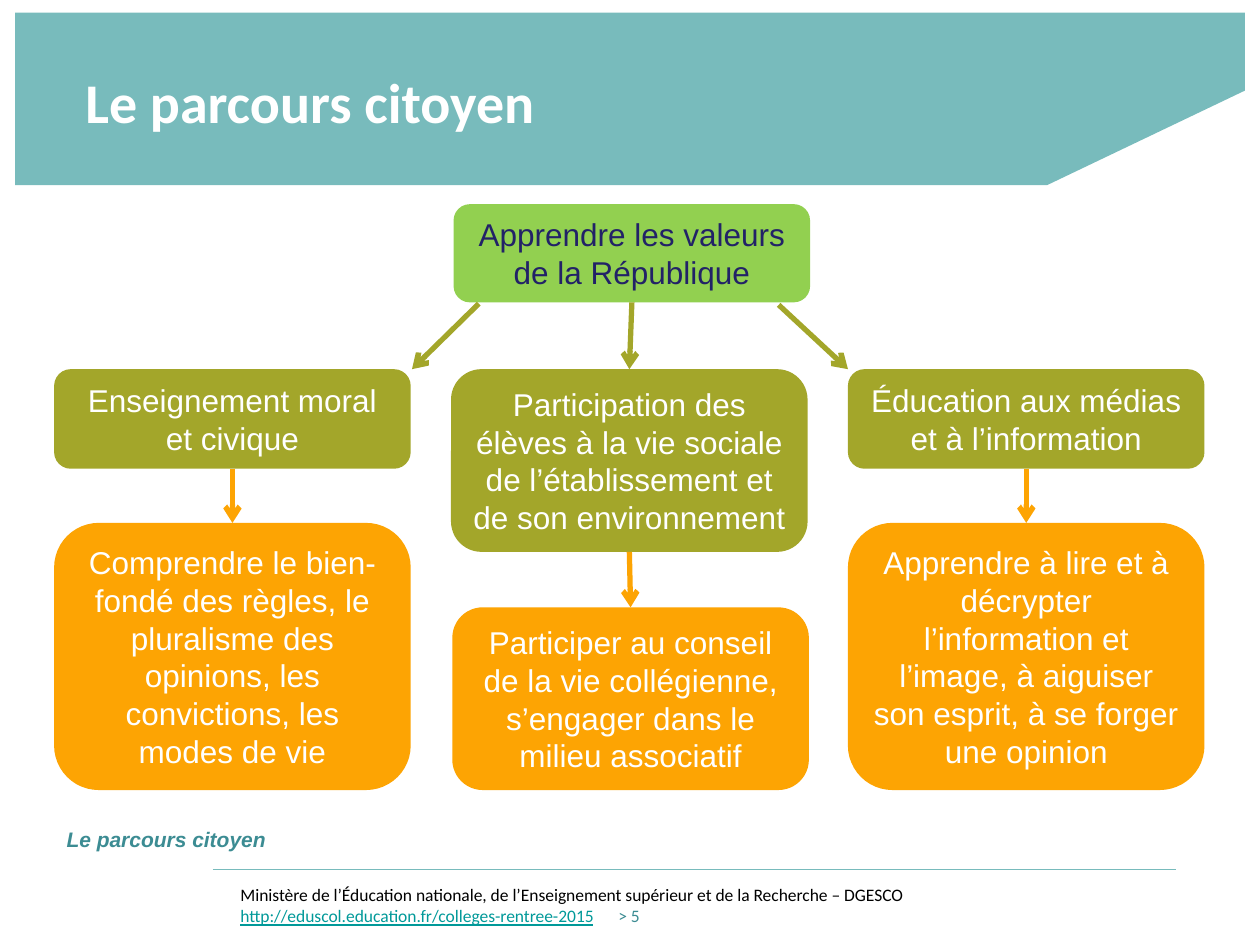
from lxml import etree
from pptx import Presentation
from pptx.dml.color import RGBColor
from pptx.enum.shapes import MSO_CONNECTOR, MSO_SHAPE
from pptx.enum.text import MSO_ANCHOR, PP_ALIGN
from pptx.oxml.ns import qn
from pptx.util import Inches, Pt

LINE = MSO_CONNECTOR.STRAIGHT
ROUND = MSO_SHAPE.ROUNDED_RECTANGLE
MIDDLE = MSO_ANCHOR.MIDDLE
TOP = MSO_ANCHOR.TOP
CENTER = PP_ALIGN.CENTER

COLORS = {
    "teal": "78BBBC", "dark": "3C8C93", "link": "009999",
    "green": "92D050", "olive": "A3A62A", "orange": "FDA403",
    "navy": "222267", "white": "FFFFFF", "black": "000000",
}


class Deck:
    def __init__(self, slide):
        self.slide = slide
        self.shapes = slide.shapes
        self.font = "Arial"
        self.head = "Calibri"
        self.size = 18
        self.width = 2.83

    def color(self, name):
        return RGBColor.from_string(COLORS[name])

    def paint(self, shape, fill):
        shape.shadow.inherit = False
        shape.fill.solid()
        shape.fill.fore_color.rgb = self.color(fill)
        shape.line.fill.background()

    def run(self, para, text, color, size, font, bold=False, italic=False, under=False):
        run = para.add_run()
        run.text = text
        face = run.font
        face.name, face.size = font, Pt(size)
        face.bold, face.italic, face.underline = bold, italic, under
        face.color.rgb = self.color(color)

    def text(self, left, top, width, height, anchor=TOP, wrap=True):
        frame = self.shapes.add_textbox(
            Inches(left), Inches(top), Inches(width), Inches(height)).text_frame
        frame.word_wrap = wrap
        frame.vertical_anchor = anchor
        return frame

    def box(self, left, top, height, text, fill, color="white"):
        shape = self.shapes.add_shape(
            ROUND, Inches(left), Inches(top), Inches(self.width), Inches(height))
        self.paint(shape, fill)
        frame = shape.text_frame
        frame.word_wrap = True
        frame.vertical_anchor = MIDDLE
        para = frame.paragraphs[0]
        para.alignment = CENTER
        self.run(para, text, color, self.size, self.font)
        return shape

    def line(self, start, end, color, weight):
        line = self.shapes.add_connector(LINE, *[Inches(n) for n in (*start, *end)])
        line.line.color.rgb = self.color(color)
        line.line.width = Pt(weight)
        etree.SubElement(line._element.spPr, qn("a:effectLst"))
        return line

    def arrow(self, start, end, color):
        line = self.line(start, end, color, 3)
        etree.SubElement(line.line._get_or_add_ln(), qn("a:tailEnd"), type="arrow")
        return line

    def join(self, upper, lower, color):
        line = self.arrow((0, 0), (1, 1), color)
        line.begin_connect(upper, 2)
        line.end_connect(lower, 0)

    def banner(self, points):
        spots = [(Inches(x), Inches(y)) for x, y in points]
        build = self.shapes.build_freeform(*spots[0])
        build.add_line_segments(spots[1:], close=True)
        self.paint(build.convert_to_shape(), "teal")

    def tab(self, para, pos):
        tabs = etree.SubElement(para._p.get_or_add_pPr(), qn("a:tabLst"))
        etree.SubElement(tabs, qn("a:tab"), pos=str(Inches(pos)), algn="l")


def main():
    prs = Presentation()
    prs.slide_width, prs.slide_height = Inches(10), Inches(7.5)
    deck = Deck(prs.slides.add_slide(prs.slide_layouts[6]))

    deck.banner([(9.88, 0.1), (0.12, 0.1), (0.12, 1.47), (8.31, 1.47), (9.88, 0.72)])
    title = deck.text(0.58, 0.13, 8.99, 1.34, MIDDLE)
    deck.run(title.paragraphs[0], "Le parcours citoyen", "white", 32, deck.head, bold=True)

    root = deck.box(3.6, 1.62, 0.78, "Apprendre les valeurs de la République", "green", "navy")
    columns = [
        (0.43, 0.43, 0.79, 4.15, 2.12, "Enseignement moral et civique",
         "Comprendre le bien-fondé des règles, le pluralisme des opinions, "
         "les convictions, les modes de vie"),
        (3.58, 3.59, 1.45, 4.82, 1.45,
         "Participation des élèves à la vie sociale de l’établissement et de son environnement",
         "Participer au conseil de la vie collégienne, s’engager dans le milieu associatif"),
        (6.73, 6.73, 0.79, 4.15, 2.12, "Éducation aux médias et à l’information",
         "Apprendre à lire et à décrypter l’information et l’image, "
         "à aiguiser son esprit, à se forger une opinion"),
    ]
    themes = []
    for left, shift, tall, top, deep, theme, goal in columns:
        upper = deck.box(left, 2.93, tall, theme, "olive")
        lower = deck.box(shift, top, deep, goal, "orange")
        deck.join(upper, lower, "orange")
        themes.append(upper)
    deck.join(root, themes[1], "olive")
    deck.arrow((3.8, 2.41), (3.27, 2.93), "olive")
    deck.arrow((6.18, 2.42), (6.73, 2.93), "olive")

    label = deck.text(0.43, 6.51, 1.8, 0.3, wrap=False)
    deck.run(label.paragraphs[0], "Le parcours citoyen", "dark", 12, deck.font,
             bold=True, italic=True)
    deck.line((1.69, 6.9), (9.33, 6.9), "teal", 0.75)
    foot = deck.text(1.81, 6.97, 7.76, 0.53)
    deck.run(foot.paragraphs[0],
             "Ministère de l’Éducation nationale, de l’Enseignement supérieur "
             "et de la Recherche – DGESCO", "black", 10, deck.head)
    para = foot.add_paragraph()
    deck.tab(para, 3)
    deck.run(para, "http://eduscol.education.fr/colleges-rentree-2015", "link", 10,
             deck.head, under=True)
    deck.run(para, "\t> 5", "dark", 10, deck.head)

    prs.save("out.pptx")


if __name__ == "__main__":
    main()
